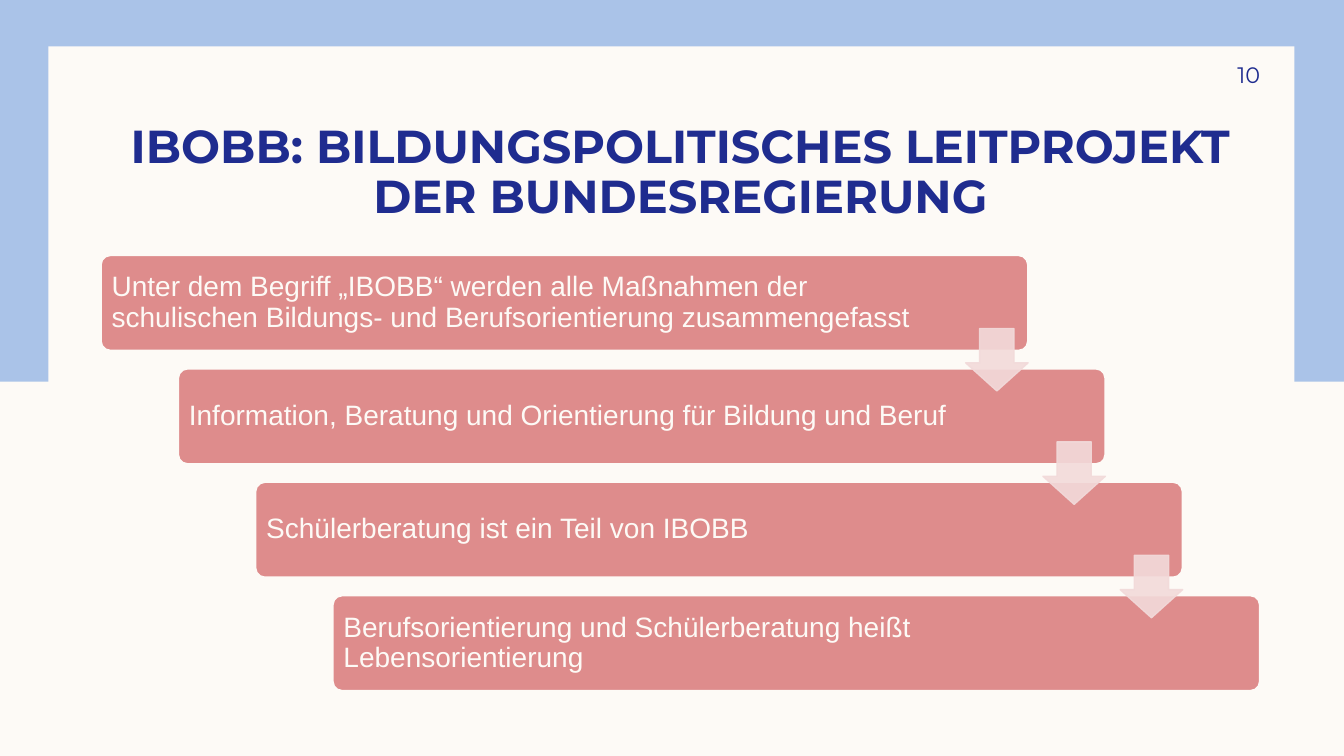
from pptx import Presentation
from pptx.dml.color import RGBColor
from pptx.enum.shapes import MSO_SHAPE
from pptx.enum.text import MSO_ANCHOR, MSO_AUTO_SIZE, PP_ALIGN
from pptx.oxml.ns import qn
from pptx.util import Inches, Pt
from lxml.etree import SubElement

WIDE, HIGH = Inches(13.33), Inches(7.5)
CREAM, SKY, NAVY = "FDFAF6", "AAC3E8", "1F2C8F"
ROSE, BLUSH = "DE8C8C", "F2DADA"
STEP_X, STEP_Y = 5.75, 15
CARDS = [
    ("Unter dem Begriff „IBOBB“ werden alle Maßnahmen der schulischen "
     "Bildungs- und Berufsorientierung zusammengefasst", 1.13),
    ("Information, Beratung und Orientierung für Bildung und Beruf", 1.47),
    ("Schülerberatung ist ein Teil von IBOBB", 1.47),
    ("Berufsorientierung und Schülerberatung heißt Lebensorientierung", 1.47),
]


def area(x, y, w, h):
    return [round(WIDE * x / 100), round(HIGH * y / 100),
            round(WIDE * w / 100), round(HIGH * h / 100)]


def paint(fill, tone, alpha=None):
    fill.solid()
    fill.fore_color.rgb = RGBColor.from_string(tone)
    if alpha:
        for clr in fill._xPr.iter(qn("a:srgbClr")):
            if clr.find(qn("a:alpha")) is None:
                SubElement(clr, qn("a:alpha"), val=str(alpha * 1000))


def write(shape, text, size, font, tone, align, anchor, pads, bold=False):
    frame = shape.text_frame
    frame.word_wrap = True
    frame.auto_size = MSO_AUTO_SIZE.NONE
    frame.vertical_anchor = anchor
    (frame.margin_left, frame.margin_top,
     frame.margin_right, frame.margin_bottom) = [Inches(p) for p in pads]
    para = frame.paragraphs[0]
    para.alignment = align
    para.line_spacing = 0.9
    run = para.add_run()
    run.text = text
    run.font.size = Pt(size)
    run.font.name = font
    run.font.bold = bold
    paint(run.font.fill, tone)


def block(slide, kind, place, tone, edge=None, width=1, alpha=None, adjust=()):
    shape = slide.shapes.add_shape(kind, *area(*place))
    shape.shadow.inherit = False
    paint(shape.fill, tone, alpha)
    if edge:
        shape.line.width = Pt(width)
        paint(shape.line.fill, edge, alpha)
    else:
        shape.line.fill.background()
    for i, value in enumerate(adjust):
        shape.adjustments[i] = value
    return shape


def heading(slide, text):
    title = slide.shapes.title
    title.left, title.top, title.width, title.height = area(7.5, 15.47, 86.27, 14.8)
    write(title, text, 33, "Montserrat", NAVY, PP_ALIGN.CENTER,
          MSO_ANCHOR.BOTTOM, (0.1, 0.05, 0.1, 0.05), True)


def number(slide, text):
    box = slide.shapes.add_textbox(*area(85, 6.67, 8.77, 6.93))
    write(box, text, 16, "Montserrat", NAVY, PP_ALIGN.RIGHT,
          MSO_ANCHOR.MIDDLE, (0.1, 0.05, 0, 0.05))


def card(slide, i, text, room):
    place = 7.5 + STEP_X * i, 33.75 + STEP_Y * i, 69, 12.65
    shape = block(slide, MSO_SHAPE.ROUNDED_RECTANGLE, place, ROSE,
                  CREAM, 1.5, adjust=[0.1])
    write(shape, text, 20, "Arial", CREAM, PP_ALIGN.LEFT,
          MSO_ANCHOR.MIDDLE, (0.08, 0.08, room, 0.08))


def arrow(slide, i):
    place = 71.85 + STEP_X * i, 43.45 + STEP_Y * i, 4.65, 8.27
    shape = block(slide, MSO_SHAPE.DOWN_ARROW, place, BLUSH, BLUSH, 1, 90)
    shape.adjustments[0] = 0.45
    shape.adjustments[1] = 0.55
    shape.adjustments[0], shape.adjustments[1] = 0.55, 0.45


def main():
    deck = Presentation()
    deck.slide_width, deck.slide_height = WIDE, HIGH
    slide = deck.slides.add_slide(deck.slide_layouts[5])
    paint(slide.background.fill, CREAM)
    block(slide, MSO_SHAPE.RECTANGLE, (0, 0, 100, 50.5), SKY)
    block(slide, MSO_SHAPE.RECTANGLE, (3.6, 6.13, 92.7, 87.87), CREAM)
    tree = slide.shapes._spTree
    tree.append(slide.shapes.title._element)
    heading(slide, "IBOBB: BILDUNGSPOLITISCHES LEITPROJEKT DER BUNDESREGIERUNG")
    number(slide, "10")
    for i, (text, room) in enumerate(CARDS):
        card(slide, i, text, room)
    for i in range(len(CARDS) - 1):
        arrow(slide, i)
    deck.save("out.pptx")


if __name__ == "__main__":
    main()
